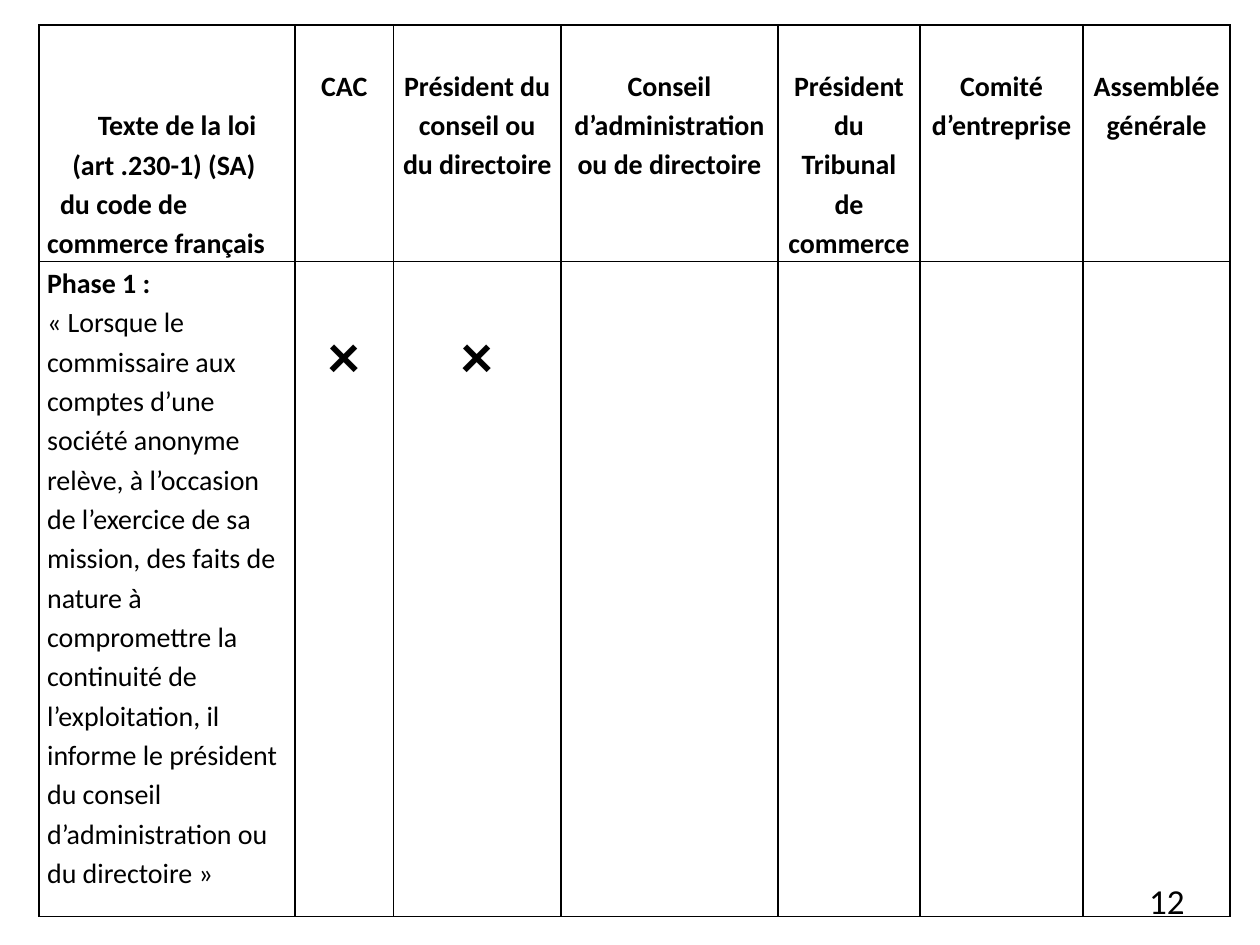
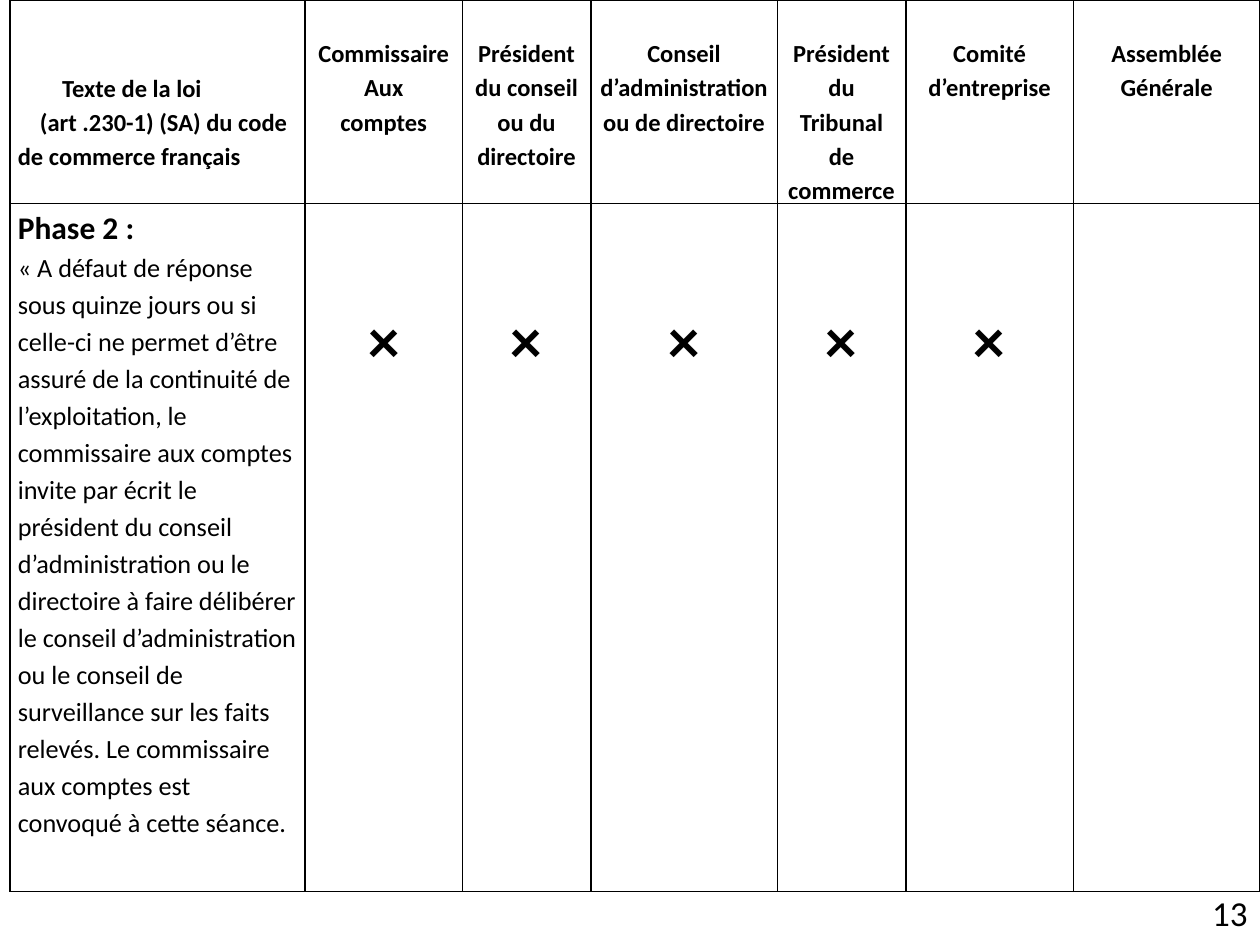
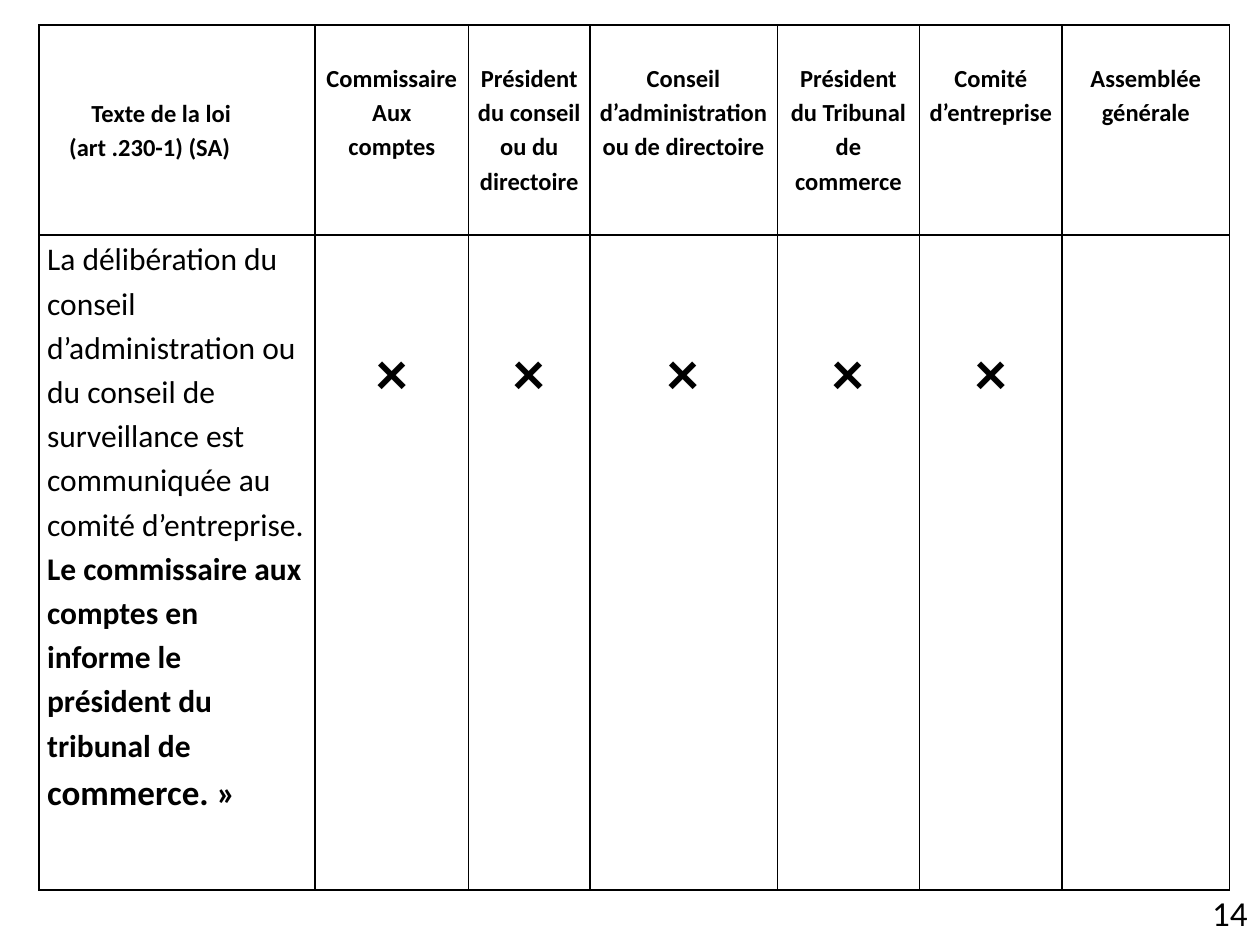
"""Build three slides that tabulate the phases of the French alert procedure."""
from lxml import etree
from pptx import Presentation
from pptx.dml.color import RGBColor
from pptx.enum.text import MSO_ANCHOR, PP_ALIGN
from pptx.oxml.ns import qn
from pptx.util import Cm, Pt

LEFT, CENTER, RIGHT = PP_ALIGN.LEFT, PP_ALIGN.CENTER, PP_ALIGN.RIGHT
MIDDLE = MSO_ANCHOR.MIDDLE
COLORS = {"text": "000000", "border": "000000", "background": "FFFFFF"}
FONT = "Calibri"
LINE_SPACING = 1.15
BLANK_LINE = 0.05
SIDE_MARGIN = Cm(0.16)
MARK, MARK_SIZE = "×", 36
NUMBER_SIZE = 20
CORNER_BOX = (24.13, 17.73, 1.27, 1.32)

AUDITOR = ["Commissaire", "Aux", "comptes"]
CHAIR = ["Président du conseil ou du directoire"]
BOARD = ["Conseil d’administration ou de directoire"]
COURT = ["Président du Tribunal de commerce"]
COMMITTEE = ["Comité d’entreprise"]
LAW_TITLE = ("Texte de la loi", 1.81)

PHASES = [
    {
        "number": "12",
        "number_box": (18.21, 17.65, 5.92, 1.02),
        "table_box": (0.79, 0.5),
        "columns": [5.16, 1.98, 3.38, 4.37, 2.87, 3.28, 2.97],
        "rows": [4.73, 13.2],
        "header_size": 16,
        "law": [LAW_TITLE, ("(art .230-1) (SA)", 0.9),
                ("du code de commerce français", 0.46)],
        "actors": [["CAC"], CHAIR, BOARD, COURT, COMMITTEE, ["Assemblée", "générale"]],
        "body": [
            [("Phase 1 :", 16, True)],
            [("« Lorsque le commissaire aux comptes d’une société anonyme relève, "
              "à l’occasion de l’exercice de sa mission, des faits de nature à "
              "compromettre la continuité de l’exploitation, il informe le président "
              "du conseil d’administration ou du directoire »", 16, False)],
        ],
        "marks": 2,
        "mark_gap": 0.92,
    },
    {
        "number": "13",
        "number_box": CORNER_BOX,
        "table_box": (0.2, 0),
        "columns": [5.95, 3.17, 2.59, 3.76, 2.59, 3.38, 3.76],
        "rows": [4.06, 13.87],
        "header_size": 14,
        "law": [LAW_TITLE, ("(art .230-1) (SA) du code de commerce français", 0.9)],
        "actors": [AUDITOR, CHAIR, BOARD, COURT, COMMITTEE, ["Assemblée", "Générale"]],
        "body": [
            [("Phase 2 :", 18, True)],
            [("« A défaut de réponse sous quinze jours ou si celle-ci ne permet d’être "
              "assuré de la continuité de l’exploitation, le commissaire aux comptes "
              "invite par écrit le président du conseil d’administration ou le "
              "directoire à faire délibérer le conseil d’administration ou le conseil "
              "de surveillance sur les faits relevés. Le commissaire aux comptes est "
              "convoqué à cette séance.", 15, False)],
        ],
        "marks": 5,
        "mark_gap": 1.78,
    },
    {
        "number": "14",
        "number_box": CORNER_BOX,
        "table_box": (0.79, 0.5),
        "columns": [5.56, 3.1, 2.44, 3.78, 2.87, 2.87, 3.38],
        "rows": [4.24, 13.2],
        "header_size": 14,
        "law": [LAW_TITLE, ("(art .230-1) (SA)", 0.9)],
        "actors": [AUDITOR, CHAIR, BOARD, COURT, COMMITTEE, ["Assemblée", "générale"]],
        "body": [
            [("La délibération du conseil d’administration ou du conseil de surveillance "
              "est communiquée au comité d’entreprise.", 18, False)],
            [("Le commissaire aux comptes en informe le président du tribunal de ",
              18, True), ("commerce. »", 20, True)],
        ],
        "marks": 5,
        "mark_gap": 1.78,
    },
]


def format_run(run, size, bold):
    """Apply the shared font and colour to a run."""
    run.font.name = FONT
    run.font.size = Pt(size)
    run.font.bold = bold
    run.font.color.rgb = RGBColor.from_string(COLORS["text"])


def write_paragraphs(text_frame, paragraphs, alignment):
    """Write paragraphs given as lists of (text, size, bold) runs."""
    text_frame.text = "\n".join(runs[0][0] for runs in paragraphs)
    for paragraph, runs in zip(text_frame.paragraphs, paragraphs):
        paragraph.alignment = alignment
        paragraph.line_spacing = LINE_SPACING
        for text, _, _ in runs[1:]:
            paragraph.add_run().text = text
        for run, (_, size, bold) in zip(paragraph.runs, runs):
            format_run(run, size, bold)


def style_cell(cell):
    """Clear the fill of a cell, set its margins and draw its four borders."""
    cell.margin_left = cell.margin_right = SIDE_MARGIN
    cell.margin_top = cell.margin_bottom = 0
    cell.fill.background()
    properties = cell._tc.get_or_add_tcPr()
    for position, side in enumerate(("lnL", "lnR", "lnT", "lnB")):
        line = etree.Element(qn(f"a:{side}"), w=str(Pt(1)))
        fill = etree.SubElement(line, qn("a:solidFill"))
        etree.SubElement(fill, qn("a:srgbClr"), val=COLORS["border"])
        properties.insert(position, line)


def fill_header(table, phase):
    """Fill the top row with the law reference and the actors."""
    size = phase["header_size"]
    law_cell = table.cell(0, 0)
    law_cell.margin_top = Cm(2 * BLANK_LINE * size)
    write_paragraphs(law_cell.text_frame,
                     [[(text, size, True)] for text, _ in phase["law"]], LEFT)
    for paragraph, (_, indent) in zip(law_cell.text_frame.paragraphs, phase["law"]):
        paragraph._p.get_or_add_pPr().set("indent", str(Pt(indent * size)))
    for column, lines in enumerate(phase["actors"], 1):
        cell = table.cell(0, column)
        cell.margin_top = Cm(BLANK_LINE * size)
        write_paragraphs(cell.text_frame, [[(line, size, True)] for line in lines], CENTER)


def fill_body(table, phase):
    """Fill the lower row with the text of the law and the marks."""
    write_paragraphs(table.cell(1, 0).text_frame, phase["body"], LEFT)
    for column in range(1, phase["marks"] + 1):
        cell = table.cell(1, column)
        cell.margin_top = Cm(phase["mark_gap"])
        write_paragraphs(cell.text_frame, [[(MARK, MARK_SIZE, True)]], CENTER)


def add_phase_table(slide, phase):
    """Add the table of a phase at its place on the slide."""
    columns, rows = phase["columns"], phase["rows"]
    left, top = phase["table_box"]
    table = slide.shapes.add_table(len(rows), len(columns), Cm(left), Cm(top),
                                   Cm(sum(columns)), Cm(sum(rows))).table
    table.first_row = table.horz_banding = False
    for column, width in zip(table.columns, columns):
        column.width = Cm(width)
    for row, height in zip(table.rows, rows):
        row.height = Cm(height)
    for cell in table.iter_cells():
        style_cell(cell)
    fill_header(table, phase)
    fill_body(table, phase)


def add_slide_number(slide, number, box):
    """Add the slide number, right-aligned in its box."""
    text_frame = slide.shapes.add_textbox(*map(Cm, box)).text_frame
    text_frame.word_wrap = True
    text_frame.vertical_anchor = MIDDLE
    text_frame.text = number
    paragraph = text_frame.paragraphs[0]
    paragraph.alignment = RIGHT
    format_run(paragraph.runs[0], NUMBER_SIZE, False)


def add_phase_slide(presentation, phase):
    """Add one slide with its table and its number."""
    slide = presentation.slides.add_slide(presentation.slide_layouts[6])
    background = slide.background.fill
    background.solid()
    background.fore_color.rgb = RGBColor.from_string(COLORS["background"])
    add_phase_table(slide, phase)
    add_slide_number(slide, phase["number"], phase["number_box"])


def main():
    """Build and save the presentation."""
    presentation = Presentation()
    presentation.slide_width, presentation.slide_height = Cm(25.4), Cm(19.05)
    for phase in PHASES:
        add_phase_slide(presentation, phase)
    presentation.save("out.pptx")


if __name__ == "__main__":
    main()
